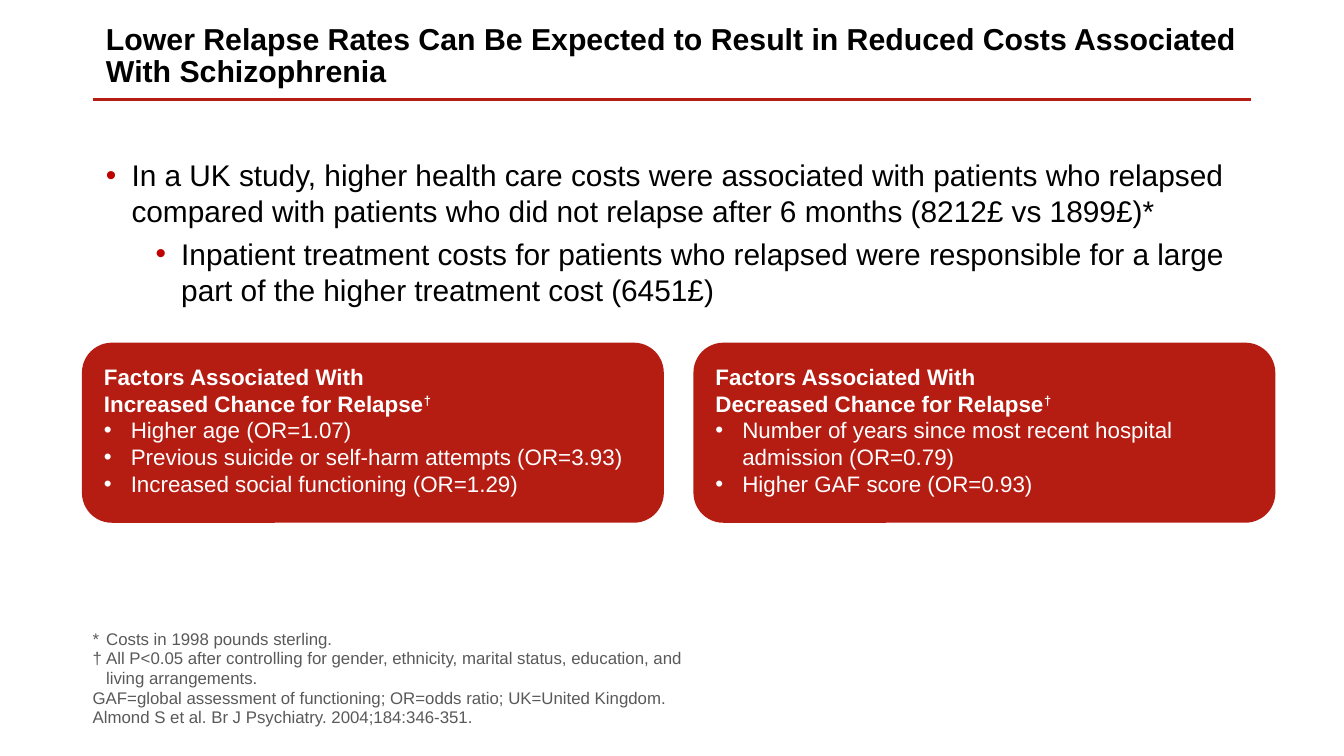
from pptx import Presentation
from pptx.dml.color import RGBColor
from pptx.enum.shapes import MSO_CONNECTOR, MSO_SHAPE
from pptx.enum.text import MSO_ANCHOR, PP_ALIGN
from pptx.oxml.ns import qn
from pptx.util import Inches, Pt
from lxml import etree

LEFT = PP_ALIGN.LEFT
TOP, MIDDLE, BOTTOM = MSO_ANCHOR.TOP, MSO_ANCHOR.MIDDLE, MSO_ANCHOR.BOTTOM
COLORS = {"red": "B51C12", "bullet": "C00000", "text": "000000",
          "note": "595959", "white": "FFFFFF"}

# Content
TITLE = ("Lower Relapse Rates Can Be Expected to Result in Reduced Costs "
         "Associated With Schizophrenia")
FINDINGS = [  # text, left indent, space before
    ("In a UK study, higher health care costs were associated with patients who "
     "relapsed compared with patients who did not relapse after 6 months "
     "(8212£ vs 1899£)*", 0.19, 0),
    ("Inpatient treatment costs for patients who relapsed were responsible for a "
     "large part of the higher treatment cost (6451£)", 0.56, 3.8),
]
FACTORS = [
    ("Factors Associated With \vIncreased Chance for Relapse",
     ["Higher age (OR=1.07)",
      "Previous suicide or self-harm attempts (OR=3.93)",
      "Increased social functioning (OR=1.29)"]),
    ("Factors Associated With \vDecreased Chance for Relapse",
     ["Number of years since most recent hospital admission (OR=0.79)",
      "Higher GAF score (OR=0.93)"]),
]
NOTES = [  # text, hanging indent
    ("*\tCosts in 1998 pounds sterling.", 0.1),
    ("†\tAll P<0.05 after controlling for gender, ethnicity, marital status, "
     "education, and living arrangements.", 0.1),
    ("GAF=global assessment of functioning; OR=odds ratio; UK=United Kingdom.", 0),
    ("Almond S et al. Br J Psychiatry. 2004;184:346-351.", 0),
]

# Layout
MARGIN, WIDTH = 0.69, 8.62
CARD_X, CARD_Y, CARD_W, CARD_H, CARD_STEP = 0.61, 2.55, 4.33, 1.34, 4.55


def rgb(name):
    return RGBColor.from_string(COLORS[name])


def set_frame(tf, anchor, insets):
    sides = ("margin_left", "margin_top", "margin_right", "margin_bottom")
    for side, inset in zip(sides, insets):
        setattr(tf, side, Inches(inset))
    tf.word_wrap = True
    tf.vertical_anchor = anchor
    return tf


def add_box(s, box, anchor=TOP, insets=(0.1, 0.05, 0.1, 0.05)):
    sp = s.shapes.add_textbox(*map(Inches, box))
    return set_frame(sp.text_frame, anchor, insets)


def style_run(r, size, color, bold):
    for name, value in {"name": "Arial", "size": Pt(size), "bold": bold}.items():
        setattr(r.font, name, value)
    r.font.color.rgb = rgb(color)


def add_paragraph(tf, text, size, color, bold=False, indent=0, hang=0,
                  bullet=None, **spacing):
    p = tf.paragraphs[0] if not tf.text else tf.add_paragraph()
    pPr = p._p.get_or_add_pPr()
    if hang:
        pPr.set("marL", str(Inches(indent)))
        pPr.set("indent", str(-Inches(hang)))
    if bullet:
        clr = etree.SubElement(pPr, qn("a:buClr"))
        etree.SubElement(clr, qn("a:srgbClr"), val=COLORS[bullet])
        etree.SubElement(pPr, qn("a:buFont"), typeface="Arial")
        etree.SubElement(pPr, qn("a:buChar"), char="•")
    p.text = text
    for name, value in {"alignment": LEFT, **spacing}.items():
        setattr(p, name, value)
    for r in p.runs:
        style_run(r, size, color, bold)
    return p


def add_card(s, x, heading, factors):
    sp = s.shapes.add_shape(MSO_SHAPE.ROUNDED_RECTANGLE,
                            *map(Inches, (x, CARD_Y, CARD_W, CARD_H)))
    sp.shadow.inherit = False
    sp.fill.solid()
    sp.fill.fore_color.rgb = rgb("red")
    sp.line.fill.background()
    tf = set_frame(sp.text_frame, MIDDLE, (0.1, 0.08, 0.1, 0.12))
    p = add_paragraph(tf, heading, 12, "white", bold=True)
    r = p.add_run()
    r.text = "†"
    style_run(r, 12, "white", True)
    r.font._element.set("baseline", "30000")
    for factor in factors:
        add_paragraph(tf, factor, 12, "white", indent=0.2, hang=0.2, bullet="white")


prs = Presentation()
prs.slide_width = Inches(10)
prs.slide_height = prs.slide_width * 9 // 16
s = prs.slides.add_slide(prs.slide_layouts[6])

# Title and rule
rule = s.shapes.add_connector(MSO_CONNECTOR.STRAIGHT, Inches(MARGIN), Inches(0.74),
                              Inches(MARGIN + WIDTH), Inches(0.74))
rule.line.color.rgb = rgb("red")
rule.line.width = Pt(1.5)
etree.SubElement(rule._element.spPr, qn("a:effectLst"))
tf = add_box(s, (MARGIN, 0.13, WIDTH, 0.43))
add_paragraph(tf, TITLE, 16.2, "text", bold=True, line_spacing=0.9)

# Study findings
tf = add_box(s, (MARGIN, 1.12, WIDTH, 3.57))
for text, indent, before in FINDINGS:
    add_paragraph(tf, text, 16, "text", indent=indent, hang=0.19, bullet="bullet",
                  space_before=Pt(before))

# Factor cards
for i, (heading, factors) in enumerate(FACTORS):
    add_card(s, CARD_X + i * CARD_STEP, heading, factors)

# Footnotes
tf = add_box(s, (MARGIN, 4.68, 4.6, 0.73), BOTTOM, (0, 0, 0, 0))
for text, hang in NOTES:
    add_paragraph(tf, text, 9, "note", indent=hang, hang=hang, line_spacing=Pt(10.5))

prs.save("out.pptx")
